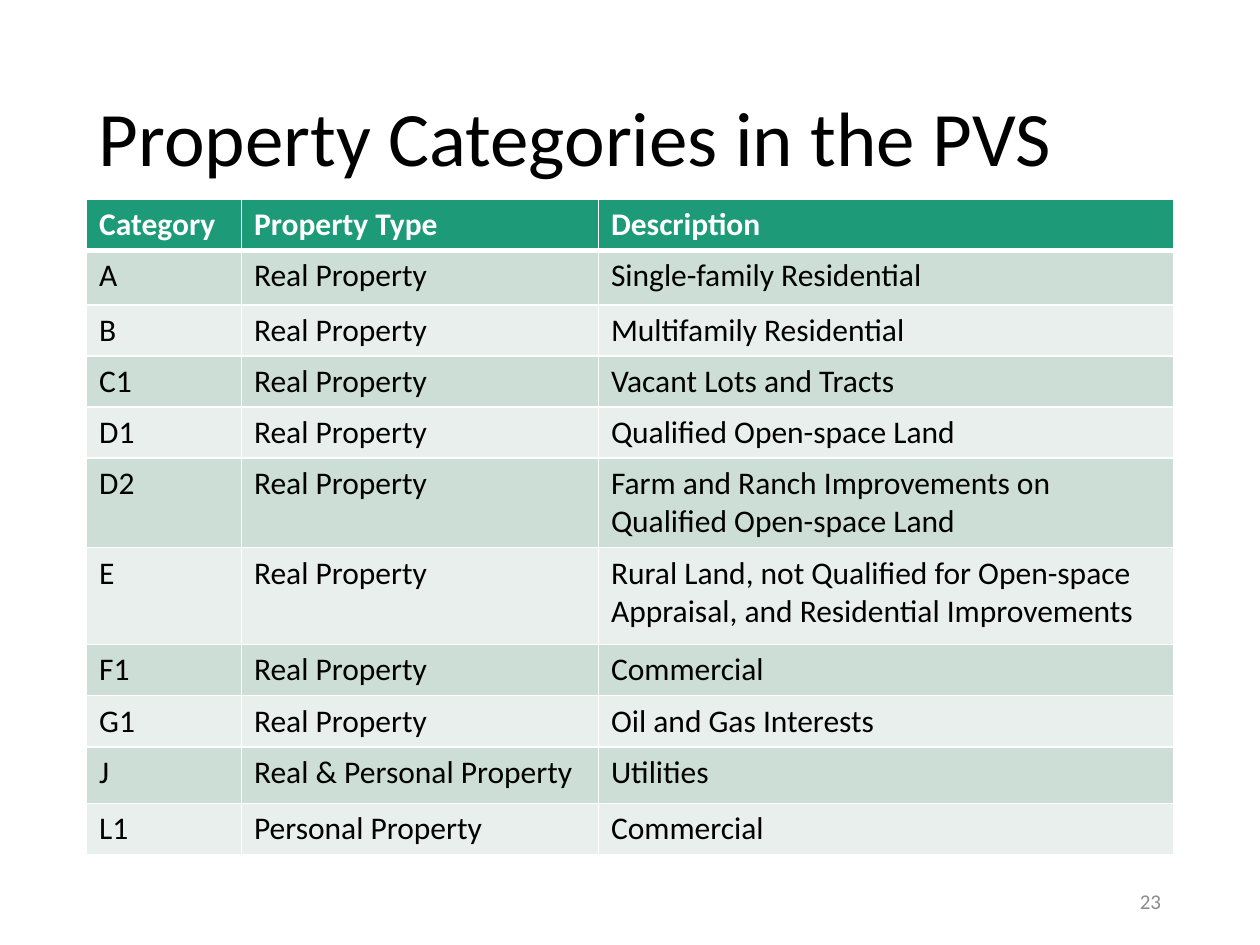
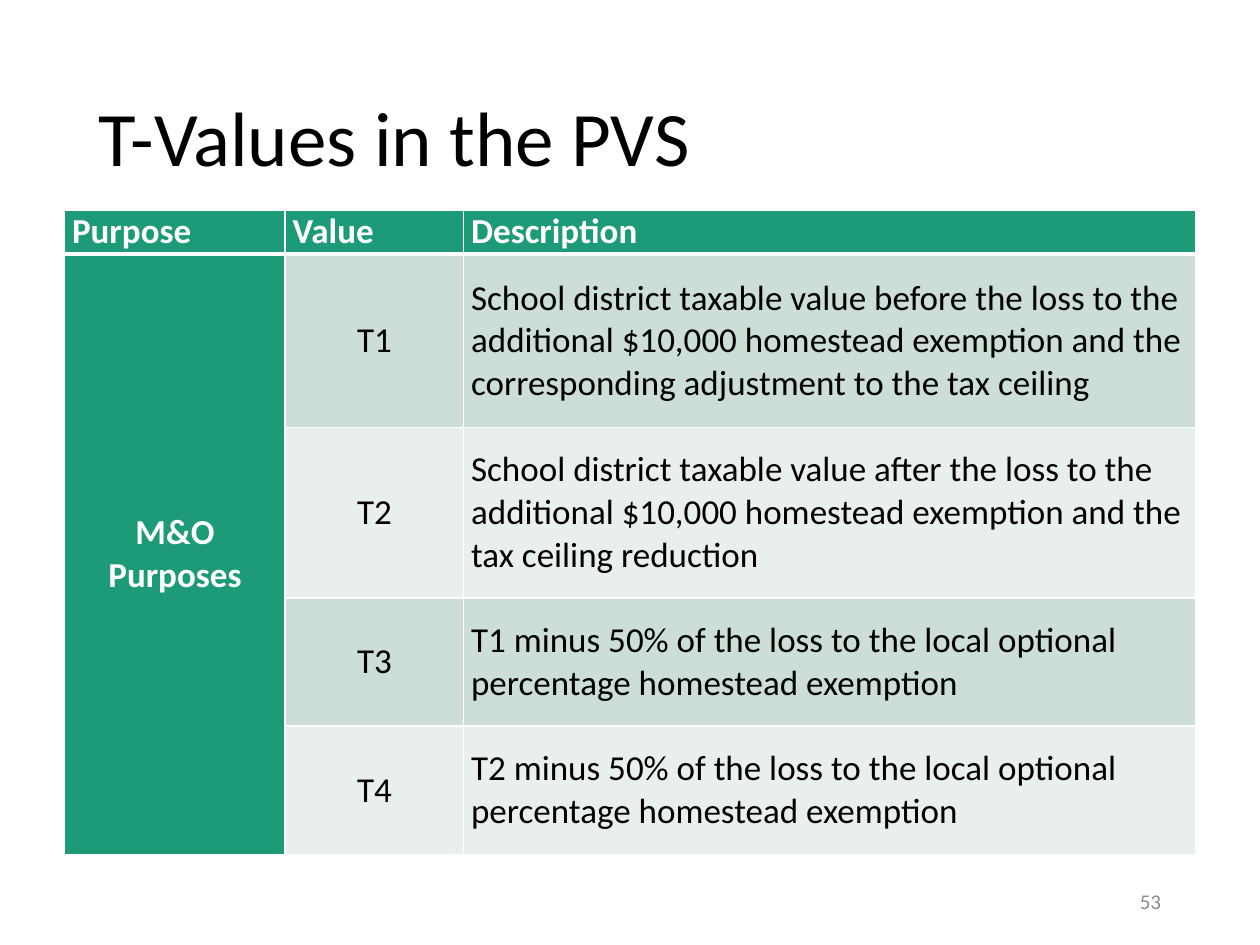
from dataclasses import dataclass

from lxml.etree import SubElement
from pptx import Presentation
from pptx.dml.color import RGBColor
from pptx.enum.text import MSO_ANCHOR, PP_ALIGN
from pptx.oxml.ns import qn
from pptx.slide import Slide
from pptx.table import _Cell
from pptx.util import Pt

FONT = "Calibri"
GREEN = RGBColor(0x1D, 0x9A, 0x78)
BAND_DARK = RGBColor(0xCD, 0xDE, 0xD6)
BAND_LIGHT = RGBColor(0xE8, 0xEF, 0xEC)
WHITE = RGBColor(0xFF, 0xFF, 0xFF)
BLACK = RGBColor(0x00, 0x00, 0x00)
GREY = RGBColor(0x8C, 0x8C, 0x8C)

THIN_RULE = 1
HEADER_RULE = 3


@dataclass(frozen=True)
class TextStyle:
    size: float
    color: RGBColor
    bold: bool = False
    align: PP_ALIGN = PP_ALIGN.LEFT
    line_spacing: float = 1.0


@dataclass(frozen=True)
class Box:
    left: float
    top: float
    width: float
    height: float


@dataclass(frozen=True)
class TableSpec:
    """Lengths are in points; row_label_column marks a green, merged first column."""
    left: float
    top: float
    column_widths: list[float]
    row_heights: list[float]
    rows: list[tuple[str, ...]]
    font_size: float
    margin_x: float = 7.2
    margin_y: float = 3.6
    body_anchor: MSO_ANCHOR = MSO_ANCHOR.TOP
    centered_columns: tuple[int, ...] = ()
    row_label_column: bool = False


TITLE_BOX = Box(49.5, 28.75, 621, 104.4)
NUMBER_BOX = Box(508.5, 500.5, 162, 28.75)
TITLE_STYLE = TextStyle(44, BLACK, line_spacing=0.9)
NUMBER_STYLE = TextStyle(12, GREY, align=PP_ALIGN.RIGHT)

ONE_LINE = 29.2
CATEGORIES = TableSpec(
    left=49.5,
    top=114,
    column_widths=[88.5, 204, 328.5],
    row_heights=[ONE_LINE, 31, ONE_LINE, ONE_LINE, ONE_LINE, 51.2, 55.4,
                 ONE_LINE, ONE_LINE, 32.4, ONE_LINE],
    rows=[
        ("Category", "Property Type", "Description"),
        ("A", "Real Property", "Single-family Residential"),
        ("B", "Real Property", "Multifamily Residential"),
        ("C1", "Real Property", "Vacant Lots and Tracts"),
        ("D1", "Real Property", "Qualified Open-space Land"),
        ("D2", "Real Property",
         "Farm and Ranch Improvements on Qualified Open-space Land"),
        ("E", "Real Property",
         "Rural Land, not Qualified for Open-space Appraisal, "
         "and Residential Improvements"),
        ("F1", "Real Property", "Commercial"),
        ("G1", "Real Property", "Oil and Gas Interests"),
        ("J", "Real & Personal Property", "Utilities"),
        ("L1", "Personal Property", "Commercial"),
    ],
    font_size=18,
)

T_VALUES = TableSpec(
    left=37,
    top=120.25,
    column_widths=[126, 102, 418.5],
    row_heights=[25, 99.2, 97.2, 73.3, 73.3],
    rows=[
        ("Purpose", "Value", "Description"),
        ("M&O Purposes", "T1",
         "School district taxable value before the loss to the additional $10,000 "
         "homestead exemption and the corresponding adjustment to the tax ceiling"),
        ("", "T2",
         "School district taxable value after the loss to the additional $10,000 "
         "homestead exemption and the tax ceiling reduction"),
        ("", "T3", "T1 minus 50% of the loss to the local optional "
                   "percentage homestead exemption"),
        ("", "T4", "T2 minus 50% of the loss to the local optional "
                   "percentage homestead exemption"),
    ],
    font_size=20,
    margin_x=4.2,
    margin_y=0,
    body_anchor=MSO_ANCHOR.MIDDLE,
    centered_columns=(0, 1),
    row_label_column=True,
)


def write_text(text_frame, text: str, style: TextStyle) -> None:
    paragraph = text_frame.paragraphs[0]
    paragraph.text = text
    paragraph.alignment = style.align
    paragraph.line_spacing = style.line_spacing
    font = paragraph.font
    font.name = FONT
    font.size = Pt(style.size)
    font.bold = style.bold
    font.color.rgb = style.color


def add_text(slide: Slide, box: Box, text: str, style: TextStyle) -> None:
    shape = slide.shapes.add_textbox(
        Pt(box.left), Pt(box.top), Pt(box.width), Pt(box.height))
    shape.text_frame.word_wrap = True
    shape.text_frame.vertical_anchor = MSO_ANCHOR.MIDDLE
    write_text(shape.text_frame, text, style)


def set_borders(cell: _Cell, top: float, bottom: float) -> None:
    """Draw white rules; they must come before the fill in the cell properties."""
    properties = cell._tc.get_or_add_tcPr()
    widths = {"a:lnL": THIN_RULE, "a:lnR": THIN_RULE, "a:lnT": top, "a:lnB": bottom}
    for position, (tag, width) in enumerate(widths.items()):
        line = properties.makeelement(qn(tag), {"w": str(Pt(width))})
        fill = SubElement(line, qn("a:solidFill"))
        SubElement(fill, qn("a:srgbClr"), val=str(WHITE))
        properties.insert(position, line)


def style_cell(cell: _Cell, spec: TableSpec, row: int, column: int) -> None:
    is_header = row == 0
    is_green = is_header or (spec.row_label_column and column == 0)
    cell.margin_left = cell.margin_right = Pt(spec.margin_x)
    cell.margin_top = cell.margin_bottom = Pt(spec.margin_y)
    cell.vertical_anchor = MSO_ANCHOR.TOP if is_header else spec.body_anchor
    cell.fill.solid()
    band = BAND_DARK if row % 2 else BAND_LIGHT
    cell.fill.fore_color.rgb = GREEN if is_green else band
    set_borders(cell,
                top=HEADER_RULE if row == 1 else THIN_RULE,
                bottom=HEADER_RULE if is_header else THIN_RULE)
    centered = not is_header and column in spec.centered_columns
    style = TextStyle(spec.font_size, WHITE if is_green else BLACK, is_green,
                      PP_ALIGN.CENTER if centered else PP_ALIGN.LEFT)
    write_text(cell.text_frame, spec.rows[row][column], style)


def add_table(slide: Slide, spec: TableSpec) -> None:
    table = slide.shapes.add_table(
        len(spec.rows), len(spec.column_widths), Pt(spec.left), Pt(spec.top),
        Pt(sum(spec.column_widths)), Pt(sum(spec.row_heights))).table
    table.first_col = spec.row_label_column
    for column, width in zip(table.columns, spec.column_widths):
        column.width = Pt(width)
    for row, height in zip(table.rows, spec.row_heights):
        row.height = Pt(height)
    for row in range(len(spec.rows)):
        for column in range(len(spec.column_widths)):
            style_cell(table.cell(row, column), spec, row, column)
    if spec.row_label_column:
        table.cell(1, 0).merge(table.cell(len(spec.rows) - 1, 0))


def add_table_slide(presentation, title: str, number: int, spec: TableSpec) -> None:
    slide = presentation.slides.add_slide(presentation.slide_layouts[6])
    add_text(slide, TITLE_BOX, title, TITLE_STYLE)
    add_table(slide, spec)
    add_text(slide, NUMBER_BOX, str(number), NUMBER_STYLE)


def main() -> None:
    presentation = Presentation()
    presentation.slide_width = Pt(720)
    presentation.slide_height = Pt(540)
    add_table_slide(presentation, "Property Categories in the PVS", 23, CATEGORIES)
    add_table_slide(presentation, "T-Values in the PVS", 53, T_VALUES)
    presentation.save("out.pptx")


if __name__ == "__main__":
    main()
